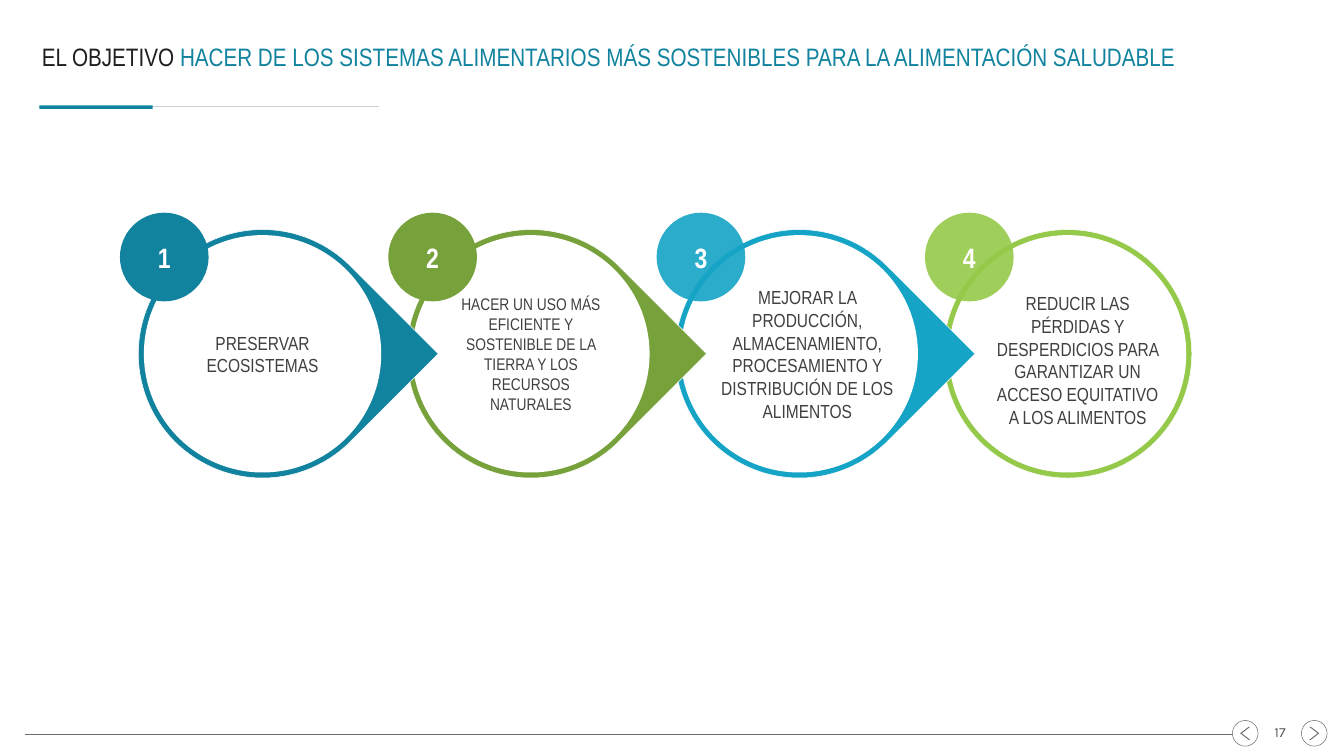
from lxml import etree
from pptx import Presentation
from pptx.dml.color import RGBColor
from pptx.enum.shapes import MSO_CONNECTOR, MSO_SHAPE
from pptx.enum.text import MSO_ANCHOR, PP_ALIGN
from pptx.oxml.ns import qn
from pptx.util import Inches, Pt

INK = {"teal": "11839E", "green": "77A13B", "cyan": "15A4C6", "lime": "95C94A",
       "white": "FFFFFF", "text": "404040", "title": "1F1F1F",
       "rule": "CBD0D7", "nav": "6C6C6C", "page": "575757"}
FONT = "Arial Narrow"


def tint(name):
    return RGBColor.from_string(INK[name])


class Deck:
    def __init__(self, slide):
        self.slide = slide

    def shape(self, kind, x, y, w, h, fill=None, line=None, alpha=None):
        item = self.slide.shapes.add_shape(
            kind, Inches(x), Inches(y), Inches(w), Inches(h))
        item.shadow.inherit = False
        if fill:
            item.fill.solid()
            item.fill.fore_color.rgb = tint(fill)
        else:
            item.fill.background()
        if alpha:
            color = item.fill._xPr.find(".//" + qn("a:srgbClr"))
            etree.SubElement(color, qn("a:alpha")).set("val", str(alpha * 1000))
        if line:
            item.line.color.rgb = tint(line)
            item.line.width = Pt(0.75)
        else:
            item.line.fill.background()
        return item

    def disc(self, x, y, size, **style):
        """Circle centred on x, y."""
        return self.shape(MSO_SHAPE.OVAL, x - size / 2, y - size / 2,
                          size, size, **style)

    def rule(self, x, end, y, color, width):
        line = self.slide.shapes.add_connector(
            MSO_CONNECTOR.STRAIGHT, Inches(x), Inches(y), Inches(end), Inches(y))
        line.line.color.rgb = tint(color)
        line.line.width = Pt(width)
        etree.SubElement(line._element.spPr, qn("a:effectLst"))

    def frame(self, frame, pad=0.05, wrap=True):
        frame.word_wrap = wrap
        frame.vertical_anchor = MSO_ANCHOR.MIDDLE
        frame.margin_left = frame.margin_right = Inches(pad)
        frame.margin_top = frame.margin_bottom = Inches(pad)
        return frame.paragraphs[0]

    def font(self, para, size, color, bold=False, name=FONT):
        para.font.name, para.font.size, para.font.bold = name, Pt(size), bold
        para.font.color.rgb = tint(color)

    def text(self, words, x, y, w, h, size, color, pad=0.05, wrap=True, **style):
        """Text box centred on x, y."""
        box = self.slide.shapes.add_textbox(
            Inches(x - w / 2), Inches(y - h / 2), Inches(w), Inches(h))
        para = self.frame(box.text_frame, pad, wrap)
        para.text = words
        para.alignment = PP_ALIGN.CENTER
        self.font(para, size, color, **style)

    def title(self, parts, x, y, w, h):
        box = self.slide.shapes.title
        box.left, box.top = Inches(x), Inches(y)
        box.width, box.height = Inches(w), Inches(h)
        para = self.frame(box.text_frame)
        para.alignment = PP_ALIGN.LEFT
        para.font.name, para.font.size = FONT, Pt(36)
        for words, color in parts:
            run = para.add_run()
            run.text = words
            run.font.color.rgb = tint(color)

    def arrow(self, x, y, turn):
        """Round page button."""
        self.disc(x, y, 0.51, line="nav")
        mark = self.shape(MSO_SHAPE.CHEVRON, x - 0.1, y - 0.13, 0.2, 0.26, fill="nav")
        mark.adjustments[0] = 0.844
        mark.rotation = turn

    def step(self, num, x, y, color, words, size, shift, drop, width, height, alpha):
        """Ring with a tip, its label and its number badge."""
        if num < 4:
            half = 4.93 / 2
            ring = self.shape(MSO_SHAPE.TEAR, x - half, y - half, 4.93, 4.93,
                              fill=color, line="white")
            ring.rotation = 45
        else:
            self.disc(x, y, 4.93, fill=color, line="white")
        self.disc(x, y, 4.71, fill="white")
        self.text(words, x + shift, y + drop, width, height, size, "text")
        self.disc(x - 1.95, y - 1.92, 1.76, fill=color, alpha=alpha)
        self.text(str(num), x - 1.95, y - 1.92, 1.24, 0.77, 40, "white", bold=True)


# color, words, size, shift, drop, width, height, alpha
STEPS = [
    ("teal", "PRESERVAR ECOSISTEMAS", 27, 0, 0, 3.33, 1.01, None),
    ("green", "HACER UN USO MÁS EFICIENTE Y SOSTENIBLE DE LA TIERRA Y LOS "
     "RECURSOS NATURALES", 24, 0, 0, 3.33, 2.52, None),
    ("cyan", "MEJORAR LA PRODUCCIÓN, ALMACENAMIENTO, PROCESAMIENTO Y "
     "DISTRIBUCIÓN DE LOS ALIMENTOS", 27, 0.16, 0, 3.65, 3.28, 90),
    ("lime", "REDUCIR LAS PÉRDIDAS Y DESPERDICIOS PARA GARANTIZAR UN ACCESO "
     "EQUITATIVO A LOS ALIMENTOS", 27, 0.2, 0.12, 3.33, 3.74, 90),
]


def main():
    prs = Presentation()
    prs.slide_width, prs.slide_height = Inches(26.67), Inches(15)
    deck = Deck(prs.slides.add_slide(prs.slide_layouts[5]))

    # Header
    deck.title([("EL OBJETIVO ", "title"),
                ("HACER DE LOS SISTEMAS ALIMENTARIOS MÁS SOSTENIBLES PARA LA "
                 "ALIMENTACIÓN SALUDABLE", "teal")], 0.78, 0.59, 25.05, 1.04)
    deck.rule(0.78, 7.52, 2.12, "rule", 1.5)
    deck.shape(MSO_SHAPE.RECTANGLE, 0.78, 2.09, 2.25, 0.07, fill="teal")

    # Footer with page buttons
    deck.rule(0.49, 24.46, 14.56, "nav", 0.75)
    deck.arrow(24.71, 14.55, 180)
    deck.arrow(26.08, 14.55, 0)
    deck.text("17", 25.4, 14.53, 0.51, 0.53, 20, "page",
              pad=0.1, wrap=False, name="Karla")

    # Steps, last one at the back so that each tip overlaps the next ring
    for num, step in reversed(list(enumerate(STEPS, 1))):
        deck.step(num, 5.21 + (num - 1) * 5.325, 7.02, *step)

    prs.save("out.pptx")


if __name__ == "__main__":
    main()
